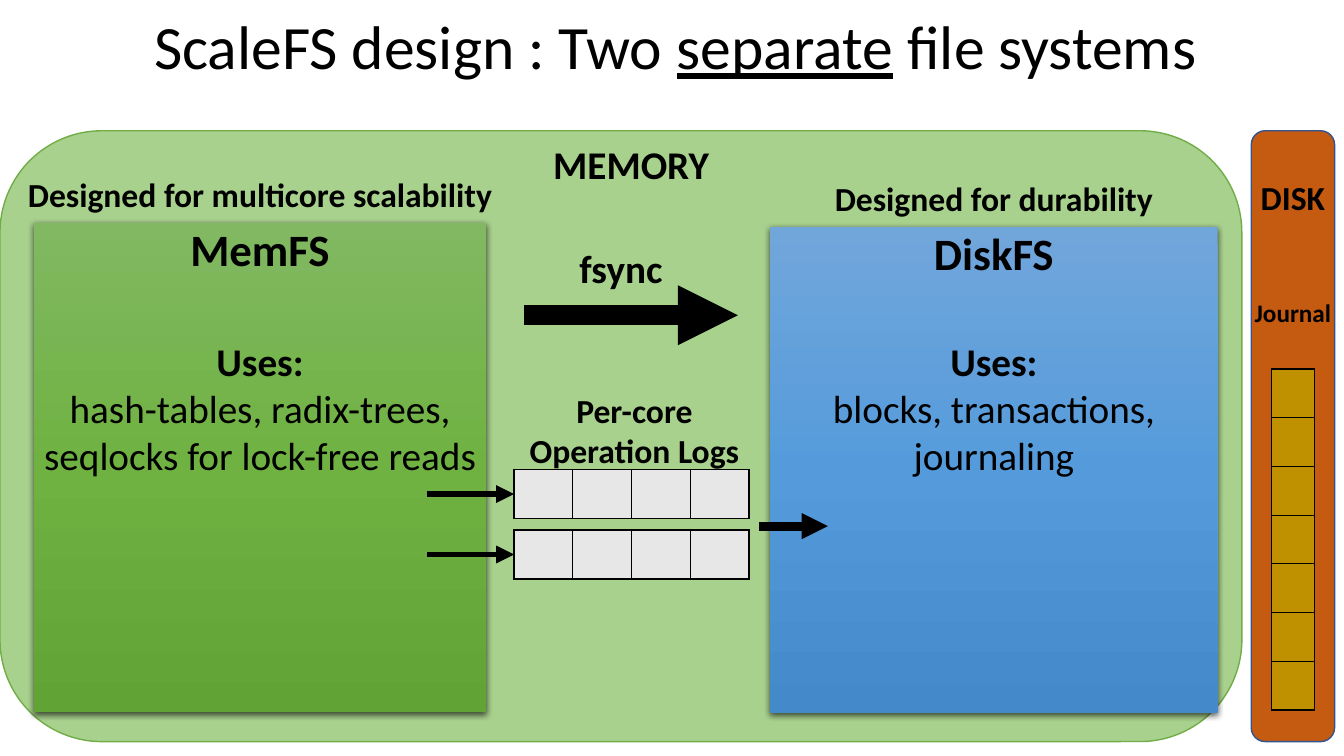
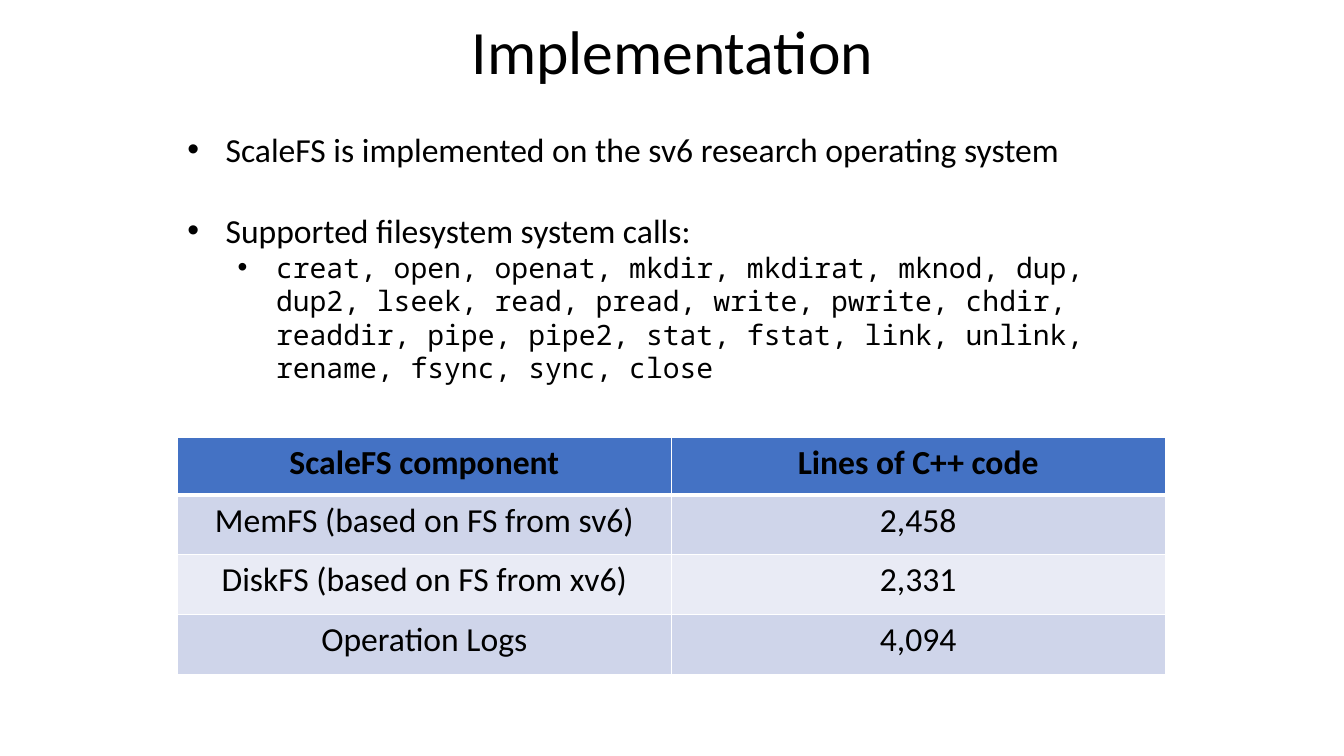
from copy import deepcopy

from lxml import etree
from pptx import Presentation
from pptx.dml.color import RGBColor
from pptx.enum.shapes import MSO_CONNECTOR, MSO_SHAPE
from pptx.enum.text import MSO_ANCHOR, MSO_AUTO_SIZE, PP_ALIGN
from pptx.oxml.ns import qn
from pptx.util import Inches, Pt

# The slide is a grid of 100 columns by 100 rows.
SLIDE_WIDTH, SLIDE_HEIGHT = Inches(13.33), Inches(7.5)
TITLE_ONLY = 5

BODY_FONT, CODE_FONT = "Calibri", "Noto Sans Mono"
CENTER, LEFT = PP_ALIGN.CENTER, PP_ALIGN.LEFT
MIDDLE = MSO_ANCHOR.MIDDLE
NO_AUTO_SIZE = MSO_AUTO_SIZE.NONE
STRAIGHT = MSO_CONNECTOR.STRAIGHT
RECTANGLE, ROUNDED = MSO_SHAPE.RECTANGLE, MSO_SHAPE.ROUNDED_RECTANGLE

BLACK = RGBColor(0x00, 0x00, 0x00)
WHITE = RGBColor(0xFF, 0xFF, 0xFF)
MEMORY_FILL = RGBColor(0xA9, 0xD1, 0x8E)
MEMORY_LINE = RGBColor(0x70, 0xAD, 0x47)
DISK_FILL = RGBColor(0xC5, 0x5A, 0x11)
DISK_LINE = RGBColor(0x32, 0x54, 0x91)
JOURNAL_FILL = RGBColor(0xBF, 0x90, 0x00)
LOG_FILL = RGBColor(0xE7, 0xE7, 0xE7)
HEADER_FILL = RGBColor(0x44, 0x72, 0xC4)
BAND_FILLS = (RGBColor(0xE9, 0xEB, 0xF5), RGBColor(0xCF, 0xD5, 0xEA))
GREENS = (RGBColor(0x81, 0xB8, 0x61), RGBColor(0x6F, 0xB2, 0x42), RGBColor(0x62, 0xA3, 0x36))
BLUES = (RGBColor(0x71, 0xA6, 0xDB), RGBColor(0x55, 0x9B, 0xDB), RGBColor(0x44, 0x8A, 0xCA))


def across(columns):
    return round(SLIDE_WIDTH * columns / 100)


def down(rows):
    return round(SLIDE_HEIGHT * rows / 100)


def place(left, top, width, height):
    return across(left), down(top), across(width), down(height)


def add_element(parent, tag, **attributes):
    element = etree.SubElement(parent, qn(tag))
    for name, value in attributes.items():
        element.set(name, str(value))
    return element


def add_run(paragraph, text, size=24, font=BODY_FONT, bold=False, underline=False):
    run = paragraph.add_run()
    run.text = text
    run.font.size = Pt(size)
    run.font.name = font
    run.font.bold = bold
    run.font.underline = underline
    run.font.color.rgb = BLACK


def write_text(text_frame, *lines, align=CENTER, line_spacing=1.0, **run_format):
    """Write one paragraph per line; a line is a string or (text, format) runs."""
    text_frame.word_wrap = True
    for index, line in enumerate(lines):
        paragraph = text_frame.add_paragraph() if index else text_frame.paragraphs[0]
        paragraph.alignment = align
        paragraph.line_spacing = line_spacing
        runs = [(line, {})] if isinstance(line, str) else line
        for text, changes in runs:
            add_run(paragraph, text, **{**run_format, **changes})


def add_text(slide, box, *lines, **text_format):
    text_frame = slide.shapes.add_textbox(*place(*box)).text_frame
    write_text(text_frame, *lines, **text_format)
    return text_frame


def add_titled_slide(presentation, box, title):
    slide = presentation.slides.add_slide(presentation.slide_layouts[TITLE_ONLY])
    shape = slide.shapes.title
    shape.left, shape.top, shape.width, shape.height = place(*box)
    shape.text_frame.auto_size = NO_AUTO_SIZE
    shape.text_frame.vertical_anchor = MIDDLE
    write_text(shape.text_frame, title, size=44, line_spacing=0.9)
    return slide


def add_panel(slide, box, fill, line):
    shape = slide.shapes.add_shape(ROUNDED, *place(*box))
    shape.shadow.inherit = False
    shape.fill.solid()
    shape.fill.fore_color.rgb = fill
    shape.line.color.rgb = line
    shape.line.width = Pt(1)


def add_gradient_box(slide, box, colors):
    """Add a rectangle shaded from top to bottom, with a soft shadow below."""
    shape = slide.shapes.add_shape(RECTANGLE, *place(*box))
    shape.line.fill.background()
    shape.fill.gradient()
    shape.fill.gradient_angle = 270
    properties = shape._element.spPr
    stop_list = properties.find(".//" + qn("a:gsLst"))
    stop_list.append(deepcopy(stop_list[0]))
    for index, stop in enumerate(shape.fill.gradient_stops):
        stop.color.rgb = colors[index]
        stop.position = index / 2

    shape.shadow.inherit = False
    shadow = add_element(properties.find(qn("a:effectLst")), "a:outerShdw",
                         blurRad=Pt(4.5), dist=Pt(1.5), dir=5400000,
                         algn="ctr", rotWithShape=0)
    shadow_color = add_element(shadow, "a:srgbClr", val=BLACK)
    add_element(shadow_color, "a:alpha", val=63000)


def add_file_system(slide, box, name, purpose, uses, colors):
    left, top, width, _ = box
    add_gradient_box(slide, box, colors)
    add_text(slide, (left, top - 0.8, width, 8.5), name, size=32, bold=True)
    add_text(slide, (left - 2.6, top - 7.1, width + 5.2, 6.7), purpose, bold=True)
    add_text(slide, (left - 0.6, 44, width + 1.2, 20.1),
             [("Uses:", {"bold": True})], *uses, size=28)


def add_arrow(slide, start, end, row, width):
    connector = slide.shapes.add_connector(
        STRAIGHT, across(start), down(row), across(end), down(row))
    connector.line.color.rgb = BLACK
    connector.line.width = Pt(width)
    add_element(connector.line._get_or_add_ln(), "a:tailEnd", type="triangle")
    add_element(connector._element.spPr, "a:effectLst")


def set_borders(cell, color, top=1, bottom=1):
    properties = cell._tc.get_or_add_tcPr()
    sides = (("a:lnL", 1), ("a:lnR", 1), ("a:lnT", top), ("a:lnB", bottom))
    for position, (tag, width) in enumerate(sides):
        line = add_element(properties, tag, w=Pt(width))
        fill = add_element(line, "a:solidFill")
        add_element(fill, "a:srgbClr", val=color)
        properties.insert(position, line)


def add_grid(slide, left, top, column_widths, row_heights):
    """Add a table without the banded style."""
    box = (left, top, sum(column_widths), sum(row_heights))
    table = slide.shapes.add_table(
        len(row_heights), len(column_widths), *place(*box)).table
    table.first_row = table.horz_banding = False
    for column, width in zip(table.columns, column_widths):
        column.width = across(width)
    for row, height in zip(table.rows, row_heights):
        row.height = down(height)
    return table


def fill_cell(cell, color):
    cell.fill.solid()
    cell.fill.fore_color.rgb = color


def add_blocks(slide, left, top, column_widths, row_heights, fill):
    table = add_grid(slide, left, top, column_widths, row_heights)
    for cell in table.iter_cells():
        fill_cell(cell, fill)
        set_borders(cell, BLACK)


def add_data_table(slide, left, top, column_widths, row_heights, rows):
    table = add_grid(slide, left, top, column_widths, row_heights)
    for row, texts in enumerate(rows):
        for column, text in enumerate(texts):
            cell = table.cell(row, column)
            fill_cell(cell, BAND_FILLS[row % 2] if row else HEADER_FILL)
            set_borders(cell, WHITE, top=3 if row == 1 else 1,
                        bottom=1 if row else 3)
            write_text(cell.text_frame, text, bold=row == 0)


def add_bullet(paragraph, indent):
    properties = paragraph._p.get_or_add_pPr()
    properties.set("marL", str(Inches(indent)))
    properties.set("indent", str(Inches(-0.38)))
    add_element(properties, "a:buFont", typeface="Arial")
    add_element(properties, "a:buChar", char="•")


def build_design(presentation):
    slide = add_titled_slide(
        presentation, (7.1, 1.7, 86.3, 9.7),
        [("ScaleFS design : Two ", {}), ("separate", {"underline": True}),
         (" file systems", {})])
    add_panel(slide, (0, 17.3, 92.4, 80.8), MEMORY_FILL, MEMORY_LINE)
    add_text(slide, (31.8, 17.9, 30.3, 7.6), "MEMORY", size=28, bold=True)

    add_panel(slide, (93.1, 17.3, 6.2, 80.8), DISK_FILL, DISK_LINE)
    add_text(slide, (92, 22.8, 8.4, 6.7), "DISK", bold=True)
    add_text(slide, (92, 38.7, 8.4, 5.3), "Journal", size=18, bold=True)
    add_blocks(slide, 94.6, 48.8, [3.2], [6.45] * 7, JOURNAL_FILL)

    add_file_system(slide, (2.5, 29.5, 33.7, 64.7), "MemFS",
                    "Designed for multicore scalability",
                    ["hash-tables, radix-trees,", "seqlocks for lock-free reads"],
                    GREENS)
    add_file_system(slide, (57.3, 30, 33.3, 64.3), "DiskFS",
                    "Designed for durability",
                    ["blocks, transactions, journaling"], BLUES)

    add_text(slide, (37.4, 31.7, 17.6, 7.6), "fsync", size=28, bold=True)
    add_arrow(slide, 39, 54.9, 41.7, 14.25)

    add_text(slide, (37, 50.9, 20.4, 12.1), "Per-core", "Operation Logs", bold=True)
    log_left, log_height = 38.25, 6.5
    for log_top in (62.1, 70.1):
        add_blocks(slide, log_left, log_top, [4.37] * 4, [log_height], LOG_FILL)
        add_arrow(slide, 31.8, log_left, log_top + log_height / 2, 4.25)
    add_arrow(slide, 56.5, 61.6, 69.6, 6.25)


def build_implementation(presentation):
    slide = add_titled_slide(presentation, (6.9, 0, 86.3, 14.3), "Implementation")
    system_calls = (
        "creat, open, openat, mkdir, mkdirat, mknod, dup, dup2, lseek, read, "
        "pread, write, pwrite, chdir, readdir, pipe, pipe2, stat, fstat, link, "
        "unlink, rename, fsync, sync, close")
    text_frame = add_text(
        slide, (13.2, 16.4, 73.5, 40.8),
        "ScaleFS is implemented on the sv6 research operating system",
        "Supported filesystem system calls:",
        [(system_calls, {"size": 20, "font": CODE_FONT})], align=LEFT)
    platform, calls_heading, calls = text_frame.paragraphs
    calls_heading.space_before = Pt(29)
    calls.level = 1
    for paragraph, indent in ((platform, 0.38), (calls_heading, 0.38), (calls, 0.88)):
        add_bullet(paragraph, indent)

    add_data_table(slide, 13.2, 57.9, [36.75] * 2, [7.6] + [7.9] * 3, [
        ("ScaleFS component", "Lines of C++ code"),
        ("MemFS (based on FS from sv6)", "2,458"),
        ("DiskFS (based on FS from xv6)", "2,331"),
        ("Operation Logs", "4,094"),
    ])


def main():
    presentation = Presentation()
    presentation.slide_width = SLIDE_WIDTH
    presentation.slide_height = SLIDE_HEIGHT
    build_design(presentation)
    build_implementation(presentation)
    presentation.save("out.pptx")


if __name__ == "__main__":
    main()
